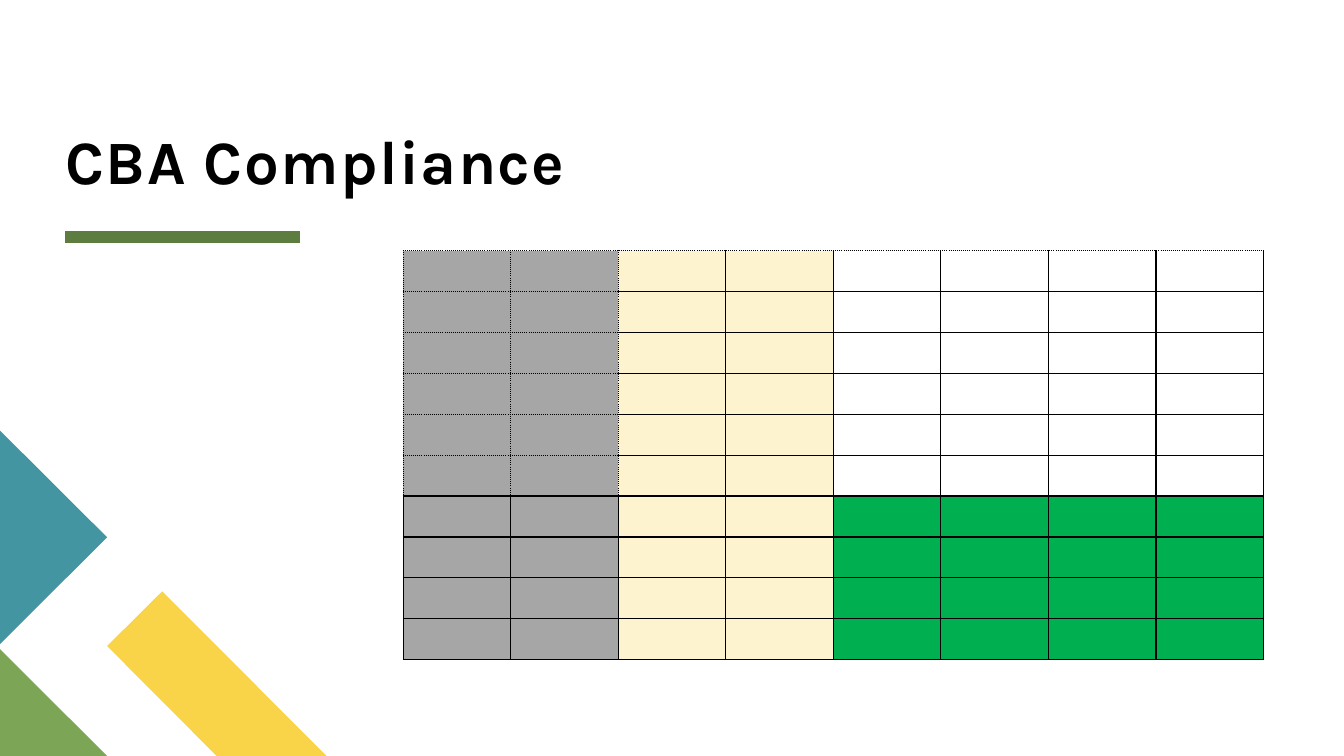
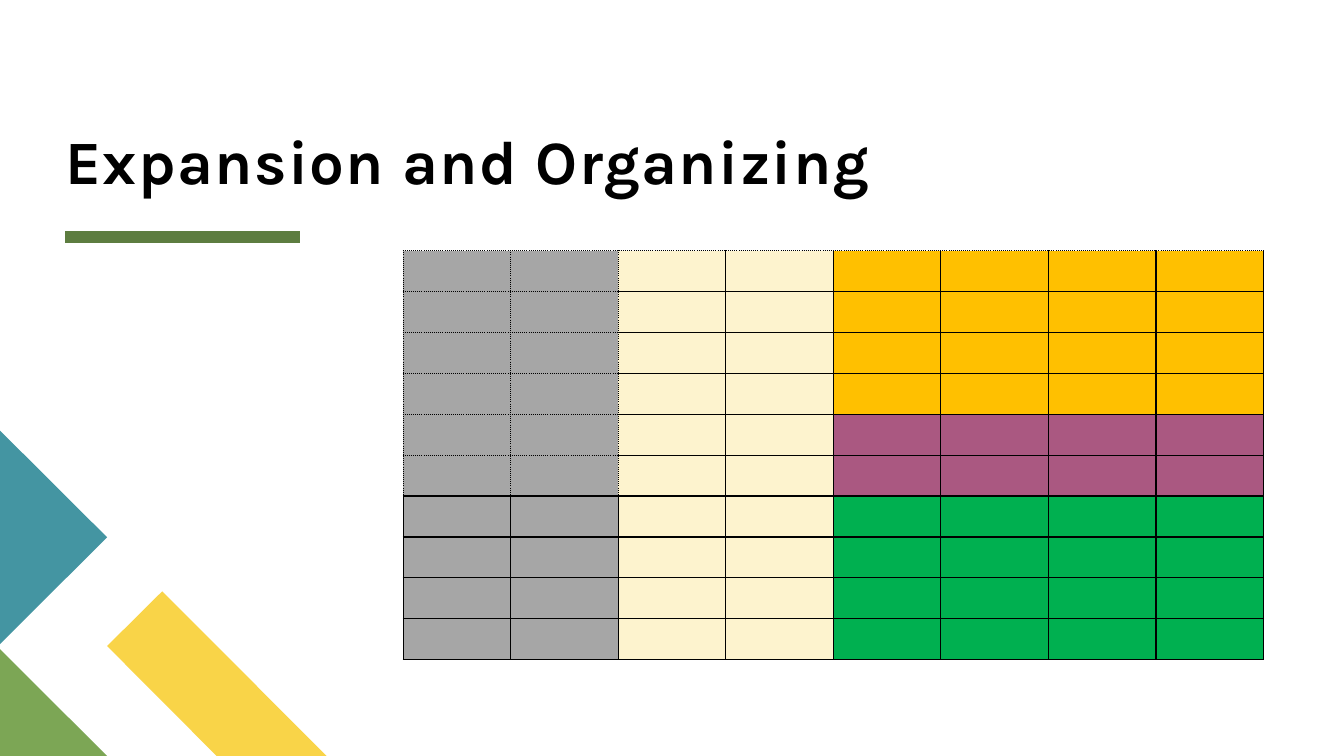
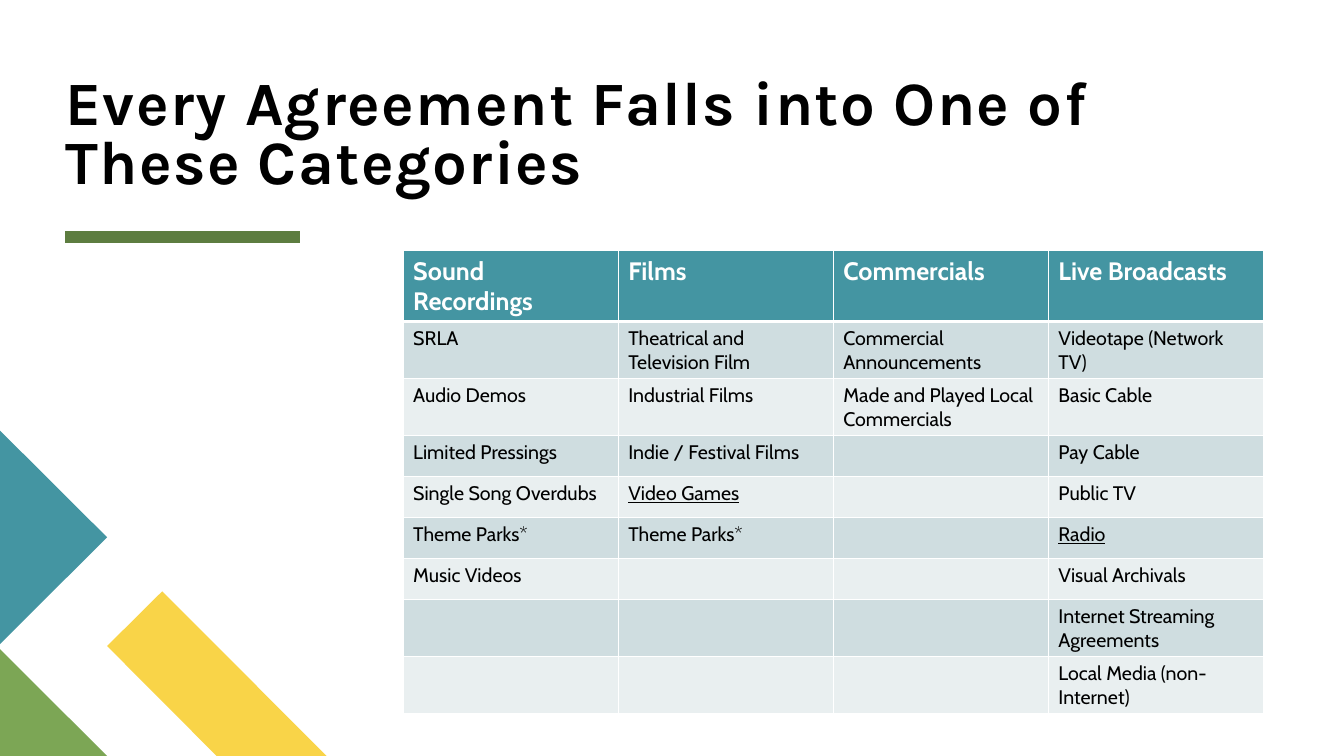
from pptx import Presentation
from pptx.dml.color import RGBColor
from pptx.enum.shapes import MSO_CONNECTOR as CONN
from pptx.enum.text import MSO_ANCHOR as ANCHOR
from pptx.oxml.ns import qn
from pptx.util import Cm, Pt
from lxml.etree import SubElement

BLACK, WHITE = "000000", "FFFFFF"
TEAL, LEAF, YELLOW, MOSS = "4495A2", "7CA655", "F9D448", "5D7D40"
GRAY, CREAM = "A6A6A6", "FDF3CE"
GREEN, AMBER, PLUM = "00B050", "FFC000", "AA5881"
BANDS = "CFDDE0", "E9EFF0"
TITLE_FONT, BODY_FONT = "Karla", "Cabin"
TITLE_BOX = 1.65, 0.28, 30.2, 4.67
TABLE_BOX = 10.16, 6.32, 21.68
ROW_H = 1.03
SOLID, DOT = "solid", "sysDot"

CORNER = [
    (YELLOW, [(8.23, 19.05), (5.46, 19.05), (2.7, 16.28), (4.09, 14.9)]),
    (LEAF, [(2.7, 19.05), (0, 19.05), (0, 16.36)]),
    (TEAL, [(0, 10.85), (2.7, 13.54), (0, 16.23)]),
]
AGREEMENTS = [
    ["Sound Recordings", "Films", "Commercials", "Live Broadcasts"],
    ["SRLA", "Theatrical and Television Film", "Commercial Announcements",
     "Videotape (Network TV)"],
    ["Audio Demos", "Industrial Films", "Made and Played Local Commercials",
     "Basic Cable"],
    ["Limited Pressings", "Indie / Festival Films", "", "Pay Cable"],
    ["Single Song Overdubs", "Video Games", "", "Public TV"],
    ["Theme Parks*", "Theme Parks*", "", "Radio"],
    ["Music Videos", "", "", "Visual Archivals"],
    ["", "", "", "Internet Streaming Agreements"],
    ["", "", "", "Local Media (non-Internet)"],
]
UNDERLINED = {"Video Games", "Radio"}


def rgb(color):
    return RGBColor.from_string(color)


def write(tf, text, font=BODY_FONT, size=14, color=BLACK, bold=False,
          underline=False, spacing=None, line=None):
    p = tf.paragraphs[0]
    if line:
        p.line_spacing = line
    r = p.add_run()
    r.text = text
    r.font.name, r.font.size = font, Pt(size)
    r.font.bold, r.font.underline = bold, underline
    r.font.color.rgb = rgb(color)
    if spacing:
        r.font._element.set("spc", str(spacing))


# Shared parts
def add_corner(s):
    for color, points in CORNER:
        first, *rest = [(Cm(x), Cm(y)) for x, y in points]
        fb = s.shapes.build_freeform(*first)
        fb.add_line_segments(rest, close=True)
        sp = fb.convert_to_shape()
        sp.shadow.inherit = False
        sp.fill.solid()
        sp.fill.fore_color.rgb = rgb(color)
        sp.line.fill.background()


def add_title(s, text, box):
    x, y, w, h = box
    rule_y = Cm(y + h + 1.02)
    rule = s.shapes.add_connector(CONN.STRAIGHT, Cm(x), rule_y,
                                  Cm(x + 5.92), rule_y)
    rule.line.color.rgb = rgb(MOSS)
    rule.line.width = Pt(8)
    SubElement(rule._element.spPr, qn("a:effectLst"))

    tf = s.shapes.add_textbox(Cm(x), Cm(y), Cm(w), Cm(h)).text_frame
    tf.word_wrap = True
    tf.vertical_anchor = ANCHOR.BOTTOM
    tf.margin_left = tf.margin_right = tf.margin_top = tf.margin_bottom = 0
    write(tf, text, font=TITLE_FONT, size=44, bold=True, spacing=100, line=0.8)


def add_slide(prs, title):
    s = prs.slides.add_slide(prs.slide_layouts[6])
    add_corner(s)
    add_title(s, title, TITLE_BOX)
    return s


# Tables
def add_grid(s, rows, cols, box):
    x, y, w = box
    table = s.shapes.add_table(rows, cols, Cm(x), Cm(y), Cm(w),
                               Cm(rows * ROW_H)).table
    table.first_row = table.horz_banding = False
    for col in table.columns:
        col.width = Cm(w / cols)
    for row in table.rows:
        row.height = Cm(ROW_H)
    return table


def add_border(cell, side, color, width=1, dash=SOLID):
    ln = SubElement(cell._tc.get_or_add_tcPr(), qn(f"a:ln{side}"),
                    w=str(Pt(width)))
    fill = SubElement(ln, qn("a:solidFill"))
    SubElement(fill, qn("a:srgbClr"), val=color)
    SubElement(ln, qn("a:prstDash"), val=dash)


def fill_cell(cell, color):
    if color:
        cell.fill.solid()
        cell.fill.fore_color.rgb = rgb(color)
    else:
        cell.fill.background()


def add_color_table(s, row_colors, box):
    """Empty grid: two gray columns, two cream ones, four by row colour."""
    table = add_grid(s, len(row_colors), 8, box)
    for i, color in enumerate(row_colors):
        upper = i < 6
        for j, fill in enumerate([GRAY] * 2 + [CREAM] * 2 + [color] * 4):
            cell = table.cell(i, j)
            cell.margin_top = cell.margin_bottom = 0
            gray = j < 2
            dotted = {"L": upper and j < 3, "R": upper and gray,
                      "T": i == 0 or upper and gray, "B": i < 5 and gray}
            for side, dots in dotted.items():
                add_border(cell, side, BLACK, dash=DOT if dots else SOLID)
            fill_cell(cell, fill)


def add_text_table(s, rows, box):
    table = add_grid(s, len(rows), len(rows[0]), box)
    for i, row in enumerate(rows):
        head = i == 0
        for j, text in enumerate(row):
            cell = table.cell(i, j)
            for side in "LRTB":
                thick = (i, side) in ((0, "B"), (1, "T"))
                add_border(cell, side, WHITE, width=3 if thick else 1)
            fill_cell(cell, TEAL if head else BANDS[(i - 1) % 2])
            if text:
                write(cell.text_frame, text, size=18 if head else 14,
                      color=WHITE if head else BLACK, bold=head,
                      underline=text in UNDERLINED)
            else:
                cell.margin_top = cell.margin_bottom = 0


def main():
    prs = Presentation()
    prs.slide_width, prs.slide_height = Cm(33.87), Cm(19.05)

    s = add_slide(prs, "CBA Compliance")
    add_color_table(s, [None] * 6 + [GREEN] * 4, TABLE_BOX)

    s = add_slide(prs, "Expansion and Organizing")
    add_color_table(s, [AMBER] * 4 + [PLUM] * 2 + [GREEN] * 4, TABLE_BOX)

    s = add_slide(prs, "Every Agreement Falls into One of These Categories")
    add_text_table(s, AGREEMENTS, TABLE_BOX)

    prs.save("out.pptx")


if __name__ == "__main__":
    main()
